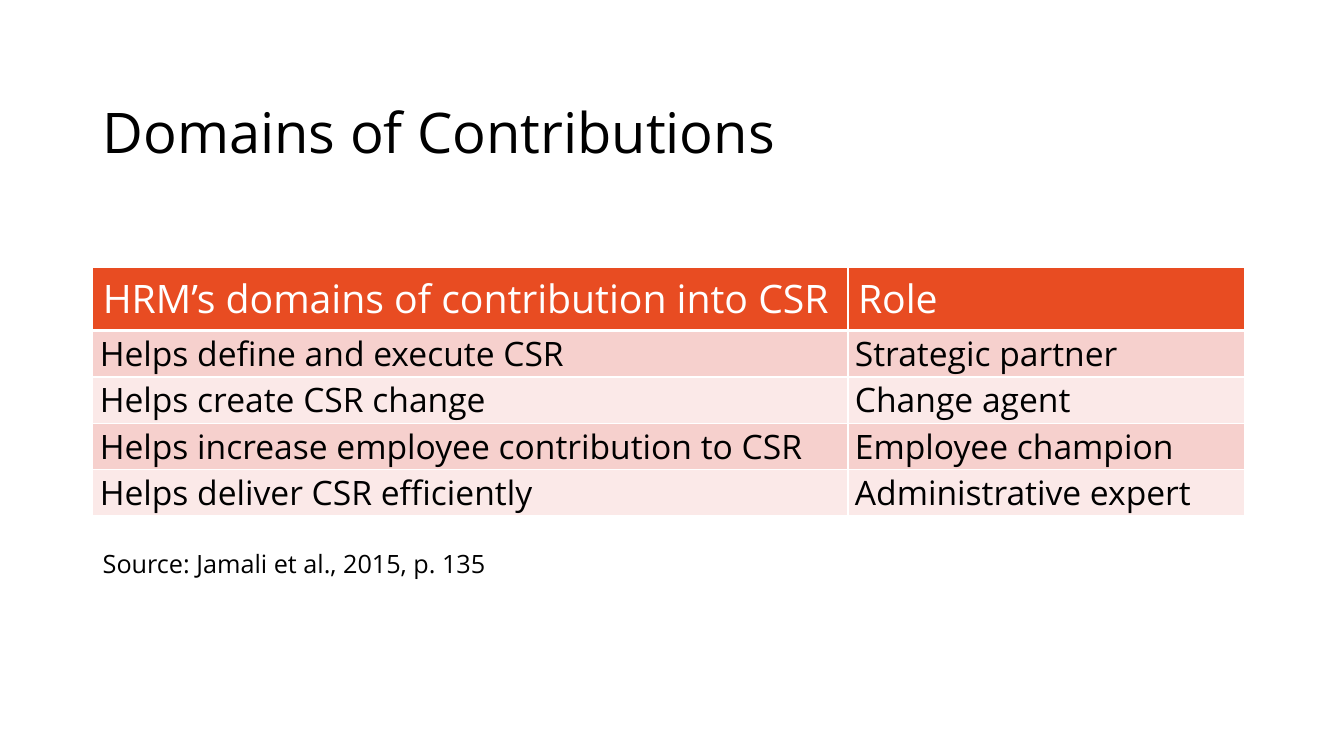
from dataclasses import dataclass

from lxml.etree import SubElement
from pptx import Presentation
from pptx.dml.color import RGBColor
from pptx.enum.text import MSO_ANCHOR
from pptx.oxml.ns import qn
from pptx.util import Inches, Pt

# Content
TITLE = "Domains of Contributions"
HEADINGS = ("HRM’s domains of contribution into CSR", "Role")
CONTRIBUTIONS = [
    ("Helps define and execute CSR", "Strategic partner"),
    ("Helps create CSR change", "Change agent"),
    ("Helps increase employee contribution to CSR", "Employee champion"),
    ("Helps deliver CSR efficiently", "Administrative expert"),
]
SOURCE = "Source: Jamali et al., 2015, p. 135"


@dataclass(frozen=True)
class Theme:
    font: str = "Open Sans"
    ink: str = "000000"
    paper: str = "FFFFFF"
    header: str = "E84C22"
    bands: tuple = ("F6D0CD", "FBE9E8")
    title_size: int = 40
    heading_size: int = 28
    body_size: int = 24
    source_size: int = 18
    rule: int = 1
    header_rule: int = 3


THEME = Theme()

# Layout, in inches; each row holds one full line of its text
WIDTH, HEIGHT = 13.33, 7.5
LEFT = 0.92
TABLE_TOP = 2.65
COLUMNS = (7.49, 3.93)
HEADER_ROW, BODY_ROW = 0.63, 0.46
BODY_INSET = 0.07


def write(frame, text, size, color):
    paragraph = frame.paragraphs[0]
    paragraph.text = text
    font = paragraph.font
    font.name, font.size, font.bold = THEME.font, Pt(size), False
    font.color.rgb = RGBColor.from_string(color)
    return paragraph


def add_text(slide, top, width, height, text, size, anchor=MSO_ANCHOR.TOP):
    box = slide.shapes.add_textbox(
        Inches(LEFT), Inches(top), Inches(width), Inches(height))
    frame = box.text_frame
    frame.word_wrap = True
    frame.vertical_anchor = anchor
    return write(frame, text, size, THEME.ink)


def style_cell(cell, fill, top_rule, bottom_rule):
    # Borders come before the fill in the cell properties
    properties = cell._tc.get_or_add_tcPr()
    rules = {"L": THEME.rule, "R": THEME.rule, "T": top_rule, "B": bottom_rule}
    for side, weight in rules.items():
        line = SubElement(properties, qn(f"a:ln{side}"), w=str(Pt(weight)))
        solid = SubElement(line, qn("a:solidFill"))
        SubElement(solid, qn("a:srgbClr"), val=THEME.paper)
    cell.fill.solid()
    cell.fill.fore_color.rgb = RGBColor.from_string(fill)


def add_contributions(slide):
    rows = [HEADINGS, *CONTRIBUTIONS]
    heights = [HEADER_ROW] + [BODY_ROW] * len(CONTRIBUTIONS)
    table = slide.shapes.add_table(
        len(rows), len(COLUMNS), Inches(LEFT), Inches(TABLE_TOP),
        Inches(sum(COLUMNS)), Inches(sum(heights))).table
    for column, width in zip(table.columns, COLUMNS):
        column.width = Inches(width)
    for r, (texts, height) in enumerate(zip(rows, heights)):
        table.rows[r].height = Inches(height)
        for c, text in enumerate(texts):
            cell = table.cell(r, c)
            if r == 0:
                style_cell(cell, THEME.header, THEME.rule, THEME.header_rule)
                write(cell.text_frame, text, THEME.heading_size, THEME.paper)
            else:
                top_rule = THEME.header_rule if r == 1 else THEME.rule
                style_cell(cell, THEME.bands[(r - 1) % 2], top_rule, THEME.rule)
                cell.margin_left = cell.margin_right = Inches(BODY_INSET)
                cell.margin_top = cell.margin_bottom = 0
                write(cell.text_frame, text, THEME.body_size, THEME.ink)


def main():
    deck = Presentation()
    deck.slide_width, deck.slide_height = Inches(WIDTH), Inches(HEIGHT)
    slide = deck.slides.add_slide(deck.slide_layouts[6])

    # Title, table, source line
    title = add_text(slide, 0.84, 11.5, 0.85, TITLE, THEME.title_size,
                     MSO_ANCHOR.BOTTOM)
    title.line_spacing = 0.9
    add_contributions(slide)
    add_text(slide, 5.39, 7.72, 0.4, SOURCE, THEME.source_size)

    deck.save("out.pptx")


if __name__ == "__main__":
    main()
